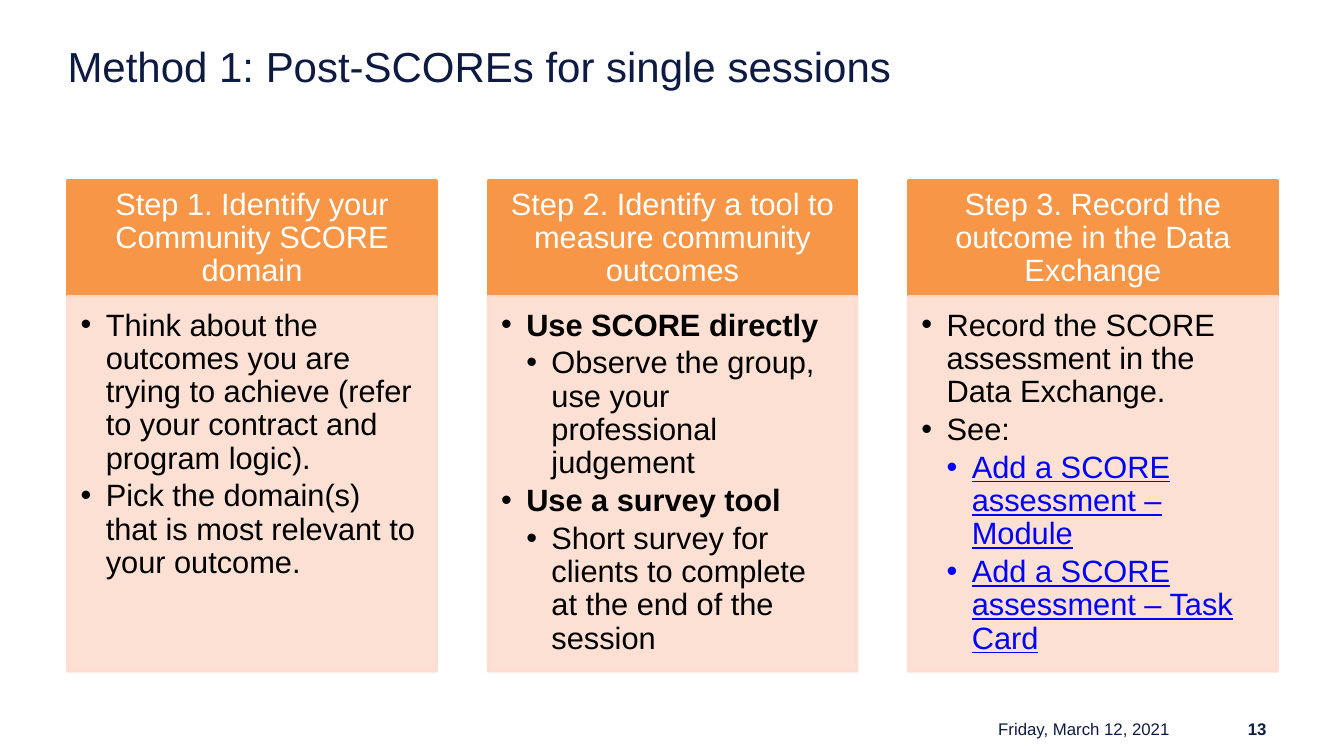
from lxml import etree
from pptx import Presentation
from pptx import util as u
from pptx.dml.color import RGBColor
from pptx.enum import shapes, text
from pptx.oxml.ns import qn

COLOURS = {"navy": "0D1B43", "orange": "F79646", "peach": "FCDDCF",
           "white": "FFFFFF", "black": "000000", "link": "0000FF"}
FONT = "Arial"
STEP_SIZE = 22
MARGIN, COLUMN_WIDTH, COLUMN_PITCH = 0.67, 3.66, 4.17
STEPS_TOP, HEADER_HEIGHT, STEPS_HEIGHT = 1.79, 1.15, 4.87

# Each step: heading, then (level, text, style) bullets
STEPS = [
    ("Step 1. Identify your Community SCORE domain", [
        (1, "Think about the outcomes you are trying to achieve "
            "(refer to your contract and program logic).", "plain"),
        (1, "Pick the domain(s) that is most relevant to your outcome.", "plain")]),
    ("Step 2. Identify a tool to measure community outcomes", [
        (1, "Use SCORE directly", "bold"),
        (2, "Observe the group, use your professional judgement", "plain"),
        (1, "Use a survey tool", "bold"),
        (2, "Short survey for clients to complete at the end of the session", "plain")]),
    ("Step 3. Record the outcome in the Data Exchange", [
        (1, "Record the SCORE assessment in the Data Exchange.", "plain"),
        (1, "See:", "plain"),
        (2, "Add a SCORE assessment – Module", "link"),
        (2, "Add a SCORE assessment – Task Card", "link")]),
]


def colour(name):
    return RGBColor.from_string(COLOURS[name])


def add_run(paragraph, words, size, colour_name, bold=False, underline=False):
    run = paragraph.add_run()
    run.text = words
    run.font.name = FONT
    run.font.size = u.Pt(size)
    run.font.bold = bold
    run.font.underline = underline
    run.font.color.rgb = colour(colour_name)


def set_frame(shape, insets, anchor):
    frame = shape.text_frame
    frame.word_wrap = True
    frame.vertical_anchor = anchor
    (frame.margin_left, frame.margin_top,
     frame.margin_right, frame.margin_bottom) = map(u.Inches, insets)
    return frame


def add_panel(slide, box, fill, opacity=100):
    shape = slide.shapes.add_shape(shapes.MSO_SHAPE.RECTANGLE, *map(u.Inches, box))
    shape.shadow.inherit = False
    shape.fill.solid()
    shape.fill.fore_color.rgb = colour(fill)
    shape.line.color.rgb = colour(fill)
    shape.line.width = u.Pt(2)
    if opacity < 100:
        for shade in shape.element.spPr.iter(qn("a:srgbClr")):
            etree.SubElement(shade, qn("a:alpha"), val=str(opacity * 1000))
    return shape


def add_bullet(paragraph, level):
    paragraph.level = level
    properties = paragraph._p.get_or_add_pPr()
    properties.set("marL", str(u.Inches(0.25 * level)))
    properties.set("indent", str(u.Inches(-0.25)))
    etree.SubElement(properties, qn("a:buFont"), typeface=FONT)
    etree.SubElement(properties, qn("a:buChar"), char="•")


def add_step(slide, box, heading, bullets):
    left, top, width, height = box

    # Heading band
    band = add_panel(slide, (left, top, width, HEADER_HEIGHT), "orange")
    frame = set_frame(band, (0.17, 0.1, 0.17, 0.1), text.MSO_ANCHOR.MIDDLE)
    paragraph = frame.paragraphs[0]
    paragraph.alignment = text.PP_ALIGN.CENTER
    paragraph.line_spacing = 0.9
    add_run(paragraph, heading, STEP_SIZE, "white")

    # Bulleted body
    body = add_panel(slide, (left, top + HEADER_HEIGHT, width, height - HEADER_HEIGHT),
                     "peach", opacity=90)
    frame = set_frame(body, (0.13, 0.13, 0.17, 0.19), text.MSO_ANCHOR.TOP)
    for index, (level, words, style) in enumerate(bullets):
        paragraph = frame.add_paragraph() if index else frame.paragraphs[0]
        paragraph.alignment = text.PP_ALIGN.LEFT
        paragraph.line_spacing = 0.9
        paragraph.space_after = u.Pt(0.15 * STEP_SIZE)
        add_bullet(paragraph, level)
        add_run(paragraph, words, STEP_SIZE, "link" if style == "link" else "black",
                bold=style == "bold", underline=style == "link")


def add_label(slide, box, words, size, insets=(0.1, 0.05, 0.1, 0.05), bold=False,
              align=text.PP_ALIGN.RIGHT, anchor=text.MSO_ANCHOR.MIDDLE):
    label = slide.shapes.add_textbox(*map(u.Inches, box))
    paragraph = set_frame(label, insets, anchor).paragraphs[0]
    paragraph.alignment = align
    add_run(paragraph, words, size, "navy", bold=bold)


def add_title(slide, box):
    add_label(slide, box, "Method 1: Post-SCOREs for single sessions", 30,
              insets=(0, 0, 0, 0), align=text.PP_ALIGN.LEFT, anchor=text.MSO_ANCHOR.TOP)


def add_footer(slide, top, height):
    add_label(slide, (11.57, top, 1.09, height), "13", 12, bold=True)
    add_label(slide, (8.59, top, 3.11, height), "Friday, March 12, 2021", 12)


def main():
    presentation = Presentation()
    presentation.slide_width = u.Inches(13.33)
    presentation.slide_height = u.Inches(7.5)
    slide = presentation.slides.add_slide(presentation.slide_layouts[6])
    slide.background.fill.solid()
    slide.background.fill.fore_color.rgb = colour("white")

    add_title(slide, (MARGIN, 0.4, 12, 0.66))
    for column, (heading, bullets) in enumerate(STEPS):
        left = MARGIN + column * COLUMN_PITCH
        add_step(slide, (left, STEPS_TOP, COLUMN_WIDTH, STEPS_HEIGHT), heading, bullets)
    add_footer(slide, 7.12, 0.23)
    presentation.save("out.pptx")


if __name__ == "__main__":
    main()
